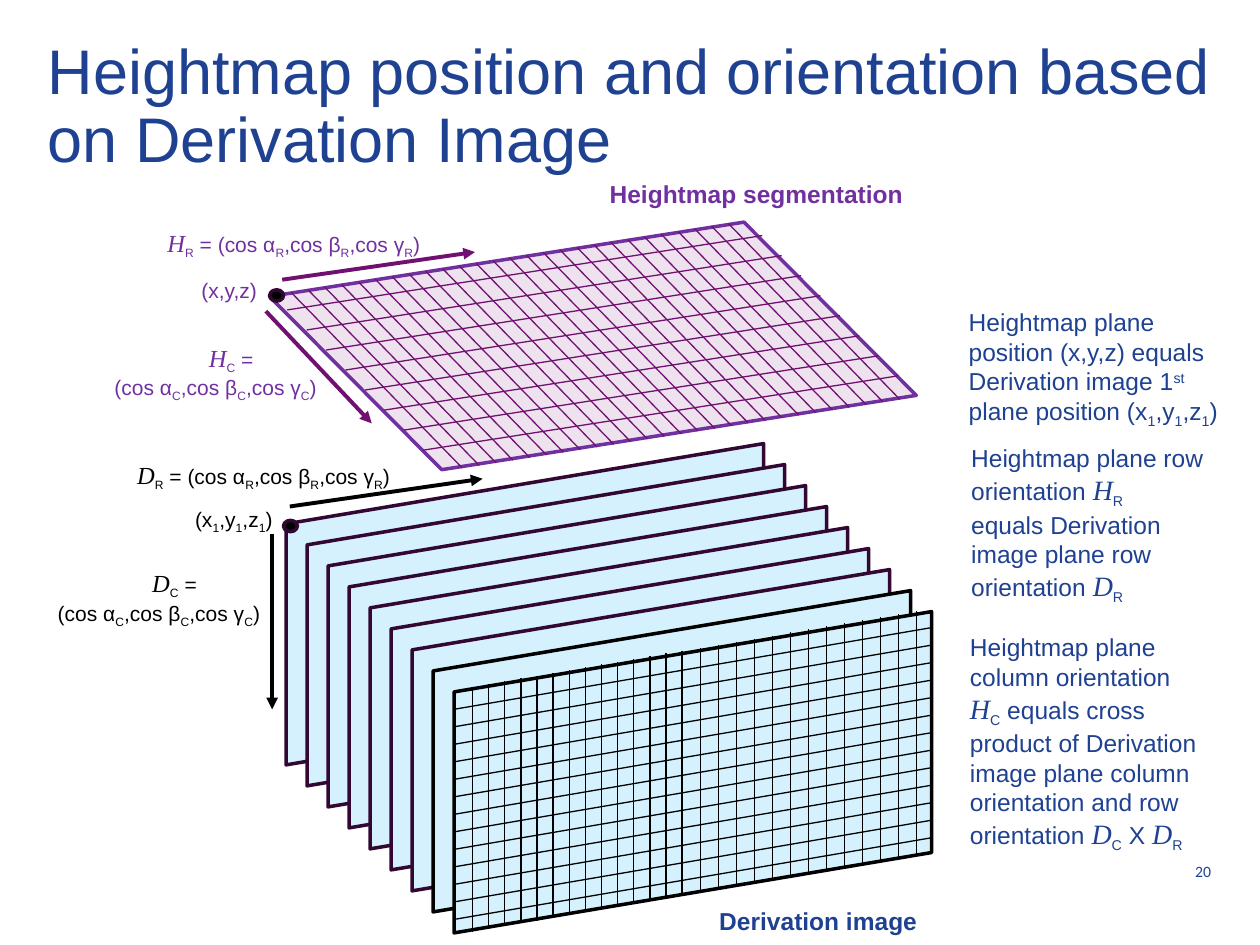
from lxml import etree
from pptx import Presentation
from pptx.dml.color import RGBColor
from pptx.enum.shapes import MSO_CONNECTOR, MSO_SHAPE
from pptx.enum.text import MSO_ANCHOR, PP_ALIGN
from pptx.oxml.ns import qn
from pptx.util import Cm, Pt

STRAIGHT = MSO_CONNECTOR.STRAIGHT
SLANT, DOT = MSO_SHAPE.PARALLELOGRAM, MSO_SHAPE.FLOWCHART_CONNECTOR
LEFT, MID, RIGHT = PP_ALIGN.LEFT, PP_ALIGN.CENTER, PP_ALIGN.RIGHT

NAVY, PURPLE, PLUM = "1E4191", "7030A0", "711071"
BLACK, DARK, SKY = "000000", "320832", "D4F1FD"
SHIFT = {"_": "-25000", "^": "30000"}


def angles(axis):
    return f"(cos α|_{axis}|,cos β|_{axis}|,cos γ|_{axis}|)"


# All places are in inches. In texts "|" parts runs; a run that starts with
# "/" is an italic symbol, "_" a subscript and "^" a superscript.
TITLE = "Heightmap position and orientation based on Derivation Image"

# box, size, colour, bold, paragraphs
LABELS = [
    ((4.74, 1.37, 2.54, 0.34), 14, PURPLE, True, ["Heightmap segmentation"]),
    ((5.61, 7.14, 1.78, 0.34), 14, NAVY, True, ["Derivation image"]),
    ((1.45, 3.97, 0.86, 0.3), 12, BLACK, False, ["(x|_1|,y|_1|,z|_1|)"]),
    ((1.5, 2.15, 0.86, 0.3), 12, PURPLE, False, ["(x,y,z)"]),
    ((1.23, 1.76, 2.65, 0.34), 12, PURPLE, False, ["/H|_R| = " + angles("R")]),
    ((0.99, 3.6, 2.96, 0.34), 12, BLACK, False, ["/D|_R| = " + angles("R")]),
    ((0.81, 2.67, 2.05, 0.54), 12, PURPLE, False, ["/H|_C| =", angles("C")]),
    ((0.36, 4.46, 2.05, 0.54), 12, BLACK, False, ["/D|_C| =", angles("C")]),
    ((7.59, 2.39, 2.3, 1.04), 14, NAVY, False, [
        "Heightmap plane position (x,y,z) equals Derivation image 1|^st"
        "| plane position (x|_1|,y|_1|,z|_1|)"]),
    ((7.61, 3.47, 2.17, 1.58), 14, NAVY, False, [
        "Heightmap plane row orientation |/H|_R",
        "equals Derivation image plane row orientation |/D|_R"]),
    ((7.6, 4.97, 2.04, 1.82), 14, NAVY, False, [
        "Heightmap plane column orientation |/H|_C| equals cross product of "
        "Derivation image plane column orientation and row orientation "
        "|/D|_C| X |/D|_R"]),
]

# first start, step between lines, reach of each line, count, colour
GRIDS = [
    ((3.6, 5.63), (0, 0.139), (3.8, -0.65), 13, BLACK),
    ((3.75, 5.45), (0.128, -0.022), (0, 1.945), 14, BLACK),
    ((5.56, 5.14), (0.143, -0.024), (0, 1.945), 13, BLACK),
    ((2.28, 2.46), (0.154, 0.159), (3.77, -0.59), 8, PLUM),
    ((2.31, 2.32), (0.1335, -0.021), (1.36, 1.395), 27, PLUM),
]

# start, end, colour
ARROWS = [
    ((2.24, 2.22), (3.77, 2), PLUM),
    ((2.11, 2.47), (2.95, 3.36), PLUM),
    ((2.3, 4.02), (3.83, 3.8), BLACK),
    ((2.16, 4.24), (2.16, 5.63), BLACK),
]

DOTS = [(2.25, 4.13), (2.14, 2.3)]
PLANES, FIRST, GAP = 9, (2.89, 2.9), 0.1667


def inch(*vals):
    return [Cm(2.54 * val) for val in vals]


def rgb(code):
    return RGBColor.from_string(code)


def add_form(kind, box, fill, edge):
    form = slide.shapes.add_shape(kind, *inch(*box))
    form.shadow.inherit = False
    form.fill.solid()
    form.fill.fore_color.rgb = rgb(fill)
    form.line.color.rgb = rgb(edge)
    form.line.width = Pt(2)
    return form


def flip(form, axis):
    form._element.spPr.find(qn("a:xfrm")).set("flip" + axis, "1")


def add_line(start, end, color, width, arrow=False):
    line = slide.shapes.add_connector(STRAIGHT, *inch(*start, *end))
    line.line.color.rgb = rgb(color)
    line.line.width = Pt(width)
    if arrow:
        etree.SubElement(line.line._get_or_add_ln(), qn("a:tailEnd"),
                         type="triangle")
    etree.SubElement(line._element.spPr, qn("a:effectLst"))


def add_text(box, size, color, bold, paras, font="Arial"):
    frame = slide.shapes.add_textbox(*inch(*box)).text_frame
    frame.word_wrap = True
    for num, text in enumerate(paras):
        para = frame.paragraphs[0] if num == 0 else frame.add_paragraph()
        para.font.name, para.font.size = font, Pt(size)
        para.font.bold, para.font.color.rgb = bold, rgb(color)
        para.alignment = MID if text.endswith(" =") else LEFT
        for part in text.split("|"):
            run = para.add_run()
            mark = part[0]
            run.text = part[1:] if mark in "/_^" else part
            if mark == "/":
                run.font.name, run.font.size = "Times New Roman", Pt(size + 2)
                run.font.italic = True
            elif mark in SHIFT:
                run._r.get_or_add_rPr().set("baseline", SHIFT[mark])
    return frame


deck = Presentation()
deck.slide_width, deck.slide_height = inch(10, 7.5)
slide = deck.slides.add_slide(deck.slide_layouts[6])

number = add_text((7.02, 6.81, 2.69, 0.24), 9, NAVY, False, ["20"], "Calibri")
number.paragraphs[0].alignment = RIGHT
title = add_text((0.38, 0.31, 9.25, 1.09), 36, NAVY, False, [TITLE])
title.margin_left = title.margin_right = 0
title.margin_top = title.margin_bottom = 0
title.vertical_anchor = MSO_ANCHOR.BOTTOM
for frame in (number, title):
    frame.paragraphs[0].line_spacing = 0.9

for num in range(PLANES):
    left, top = (pos + num * GAP for pos in FIRST)
    edge = BLACK if num >= PLANES - 2 else DARK
    plane = add_form(SLANT, (left, top, 2.55, 3.79), SKY, edge)
    plane.rotation = 90
    flip(plane, "V")

height = add_form(SLANT, (2.23, 1.96, 4.95, 1.57), "711371", PURPLE)
height.adjustments[0] = 0.725
height.rotation = 171.1
flip(height, "H")
tint = height._element.spPr.find(qn("a:solidFill"))[0]
etree.SubElement(tint, qn("a:alpha"), val="12000")

for (x, y), (dx, dy), (wide, tall), count, color in GRIDS:
    for num in range(count):
        start = x + num * dx, y + num * dy
        add_line(start, (start[0] + wide, start[1] + tall), color, 0.75)

for spot in DOTS:
    add_form(DOT, (*spot, 0.11, 0.09), BLACK, DARK)
for start, end, color in ARROWS:
    add_line(start, end, color, 2.25, arrow=True)
for label in LABELS:
    add_text(*label)

deck.save("out.pptx")
